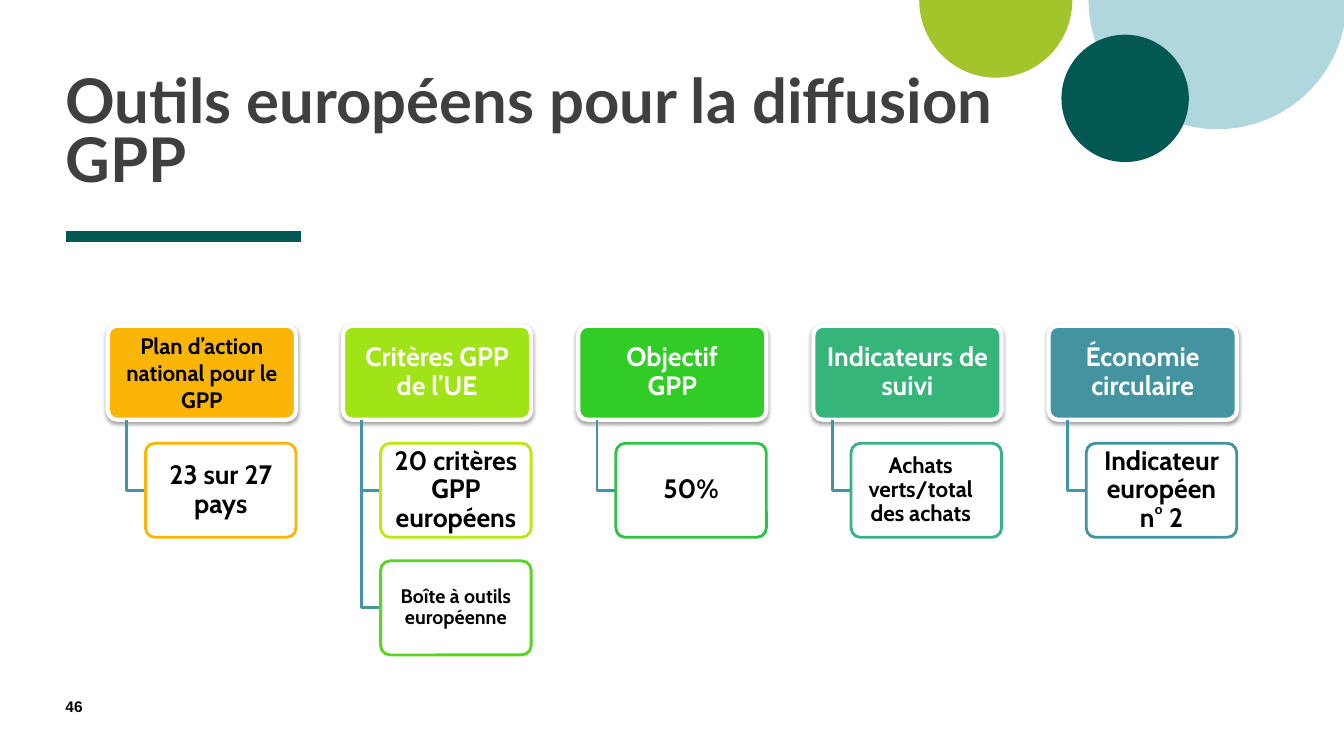
from lxml.etree import SubElement
from pptx import Presentation
from pptx.dml.color import RGBColor
from pptx.enum.shapes import MSO_CONNECTOR, MSO_SHAPE
from pptx.enum.text import MSO_ANCHOR, PP_ALIGN
from pptx.oxml import parse_xml
from pptx.oxml.ns import nsdecls, qn
from pptx.util import Pt

COLORS = {
    "teal": "035854", "sky": "AFD7DD", "olive": "A3C42A", "title": "3F3F3F",
    "black": "000000", "white": "FFFFFF", "branch": "4295A2",
    "amber": "FAB506", "lime": "A0E316", "green": "32CC26",
    "jade": "35B579", "blue": "4393A0", "yellow_lime": "BCE812",
    "leaf": "59D520", "emerald": "2CC346", "sea": "38B187",
}
CARD_H = 67.2
GAP = CARD_H / 4
HEAD_W = 2 * CARD_H
CHILD_W = 1.6 * CARD_H
CHILD_INDENT = 0.4 * CARD_H
COLUMN_PITCH = 2.5 * CARD_H

# head: text, size, text colour, fill; children: text, size, line, left shift
COLUMNS = [
    (("Plan d’action national pour le GPP", 16, "black", "amber", 1.0),
     [("23 sur 27 pays", 19, "amber", 0)]),
    (("Critères GPP de l’UE", 19, "white", "lime", 0.9),
     [("20 critères GPP européens", 19, "yellow_lime", 0),
      ("Boîte à outils européenne", 14, "leaf", 0)]),
    (("Objectif\nGPP", 19, "white", "green", 0.9),
     [("50%", 19, "emerald", 0)]),
    (("Indicateurs de suivi", 19, "white", "jade", 0.9),
     [("Achats verts/total des achats", 16, "sea", 4)]),
    (("Économie circulaire", 19, "white", "blue", 0.9),
     [("Indicateur européen n° 2", 19, "blue", 0)]),
]


def rgb(name):
    """Return the named colour."""
    return RGBColor.from_string(COLORS[name])


def write(tf, text, size, font, color, align, spacing):
    """Fill a text frame with bold paragraphs, one per line of text."""
    tf.word_wrap = True
    tf.text = text
    for p in tf.paragraphs:
        p.alignment, p.line_spacing = align, spacing
        p.font.name, p.font.size, p.font.bold = font, Pt(size), True
        p.font.color.rgb = rgb(color)


def add_label(s, box, text, size, font, color, anchor, spacing):
    """Add a left-aligned text box without insets."""
    tf = s.shapes.add_textbox(*map(Pt, box)).text_frame
    tf.margin_left = tf.margin_right = tf.margin_top = tf.margin_bottom = 0
    tf.vertical_anchor = anchor
    write(tf, text, size, font, color, PP_ALIGN.LEFT, spacing)


def add_circle(s, box, color, half=False):
    """Add a full circle, or only its lower half."""
    kind = MSO_SHAPE.PIE if half else MSO_SHAPE.OVAL
    sp = s.shapes.add_shape(kind, *map(Pt, box))
    if half:
        sp.adjustments[0], sp.adjustments[1] = 0, 108
    sp.shadow.inherit = False
    sp.fill.solid()
    sp.fill.fore_color.rgb = rgb(color)
    sp.line.fill.background()


def add_decoration(s, right):
    """Place the three circles against the right edge."""
    add_circle(s, (right - 182.4, -92, 184.3, 184.3), "sky", True)
    add_circle(s, (right - 303.4, -55.4, 109.4, 110.9), "olive", True)
    add_circle(s, (right - 201.8, 24.8, 91, 91), "teal")


def add_heading(s, left, top, width, height):
    """Place the title and the rule below it."""
    add_label(s, (left, top, width, height),
              "Outils européens pour la diffusion\vGPP",
              44, "Lato", "title", MSO_ANCHOR.BOTTOM, 0.8)
    y = top + height + 30.2
    rule = s.shapes.add_connector(
        MSO_CONNECTOR.STRAIGHT, Pt(left), Pt(y), Pt(left + 168), Pt(y))
    rule.line.color.rgb = rgb("teal")
    rule.line.width = Pt(8)
    SubElement(rule._element.spPr, qn("a:effectLst"))


def add_card(s, box, text, size, color, fill, line, weight, spacing, shift=0):
    """Add a rounded card with centred text, optionally shifted left."""
    sp = s.shapes.add_shape(MSO_SHAPE.ROUNDED_RECTANGLE, *map(Pt, box))
    sp.adjustments[0] = 0.1
    sp.shadow.inherit = False
    sp.fill.solid()
    sp.fill.fore_color.rgb = rgb(fill)
    sp.line.color.rgb = rgb(line)
    sp.line.width = Pt(weight)
    tf = sp.text_frame
    tf.margin_left, tf.margin_right = Pt(2.9), Pt(2.9 + 2 * shift)
    tf.margin_top = tf.margin_bottom = Pt(2.2)
    tf.vertical_anchor = MSO_ANCHOR.MIDDLE
    write(tf, text, size, "Cabin", color, PP_ALIGN.CENTER, spacing)
    return sp


def add_shadow(sp):
    """Give a shape a soft shadow below it."""
    effects = sp._element.spPr.find(qn("a:effectLst"))
    effects.append(parse_xml(
        f'<a:outerShdw {nsdecls("a")} blurRad="{Pt(3.1)}" dist="{Pt(1.6)}" '
        f'dir="5400000" rotWithShape="0"><a:srgbClr val="{COLORS["black"]}">'
        '<a:alpha val="37000"/></a:srgbClr></a:outerShdw>'))


def add_branch(s, x, top, right, bottom):
    """Draw an elbow from a head card down to a child card."""
    builder = s.shapes.build_freeform(Pt(x), Pt(top))
    builder.add_line_segments(
        [(Pt(x), Pt(bottom)), (Pt(right), Pt(bottom))], close=False)
    sp = builder.convert_to_shape()
    sp.shadow.inherit = False
    sp.fill.background()
    sp.line.color.rgb = rgb("branch")
    sp.line.width = Pt(2)


def add_column(s, left, top, head, children):
    """Place a head card with its children hanging below it."""
    text, size, color, fill, spacing = head
    card = add_card(s, (left, top, HEAD_W, CARD_H), text, size, color,
                    fill, "white", 3, spacing)
    add_shadow(card)
    child_left = left + CHILD_INDENT
    for i, (text, size, line, shift) in enumerate(children, 1):
        y = top + i * (CARD_H + GAP)
        add_branch(s, left + CHILD_INDENT / 2, top + CARD_H,
                   child_left, y + CARD_H / 2)
        child = add_card(s, (child_left, y, CHILD_W, CARD_H), text, size,
                         "black", "white", line, 2, 0.9, shift)
        tint = child._element.spPr.find(qn("a:solidFill"))[0]
        SubElement(tint, qn("a:alpha"), val="89000")


def add_hierarchy(s, left, top):
    """Place all columns at equal steps."""
    for i, (head, children) in enumerate(COLUMNS):
        add_column(s, left + i * COLUMN_PITCH, top, head, children)


def main():
    """Build and save the slide."""
    prs = Presentation()
    prs.slide_width, prs.slide_height = Pt(960), Pt(540)
    s = prs.slides.add_slide(prs.slide_layouts[6])
    add_decoration(s, 960)
    add_heading(s, 46.8, 21.6, 769.7, 117.4)
    add_hierarchy(s, 77, 232.6)
    add_label(s, (46.8, 498.2, 41, 19.4), "46", 11, "Arial", "black",
              MSO_ANCHOR.TOP, 1.0)
    prs.save("out.pptx")


if __name__ == "__main__":
    main()
